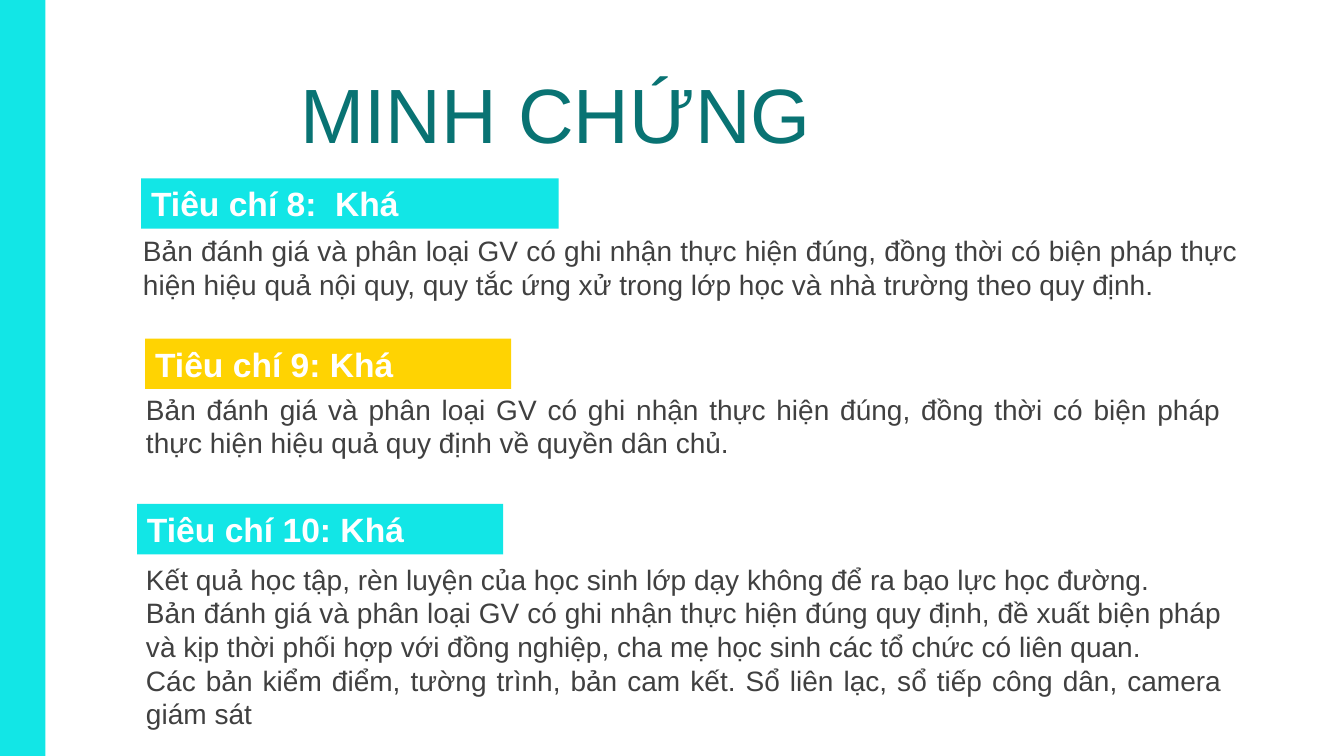
from pptx import Presentation
from pptx.dml.color import RGBColor
from pptx.enum.shapes import MSO_SHAPE
from pptx.enum.text import MSO_ANCHOR, PP_ALIGN
from pptx.util import Inches, Pt

CYAN = RGBColor(0x12, 0xE6, 0xE6)
YELLOW = RGBColor(0xFF, 0xD3, 0x02)
TEAL = RGBColor(0x09, 0x73, 0x73)
GRAY = RGBColor(0x40, 0x40, 0x40)
WHITE = RGBColor(0xFF, 0xFF, 0xFF)

# Each criterion: label, label box, label fill, evidence paragraphs, evidence box
CRITERIA = [
    ("Tiêu chí 8:  Khá", (1.4, 1.77, 4.14, 0.5), CYAN,
     ["Bản đánh giá và phân loại GV có ghi nhận thực hiện đúng, đồng thời có biện pháp "
      "thực hiện hiệu quả nội quy, quy tắc ứng xử trong lớp học và nhà trường theo quy định."],
     (1.32, 2.27, 11.06, 0.77)),
    ("Tiêu chí 9: Khá", (1.44, 3.36, 3.63, 0.5), YELLOW,
     ["Bản đánh giá và phân loại GV có ghi nhận thực hiện đúng, đồng thời có biện pháp "
      "thực hiện hiệu quả quy định về quyền dân chủ."],
     (1.35, 3.84, 10.86, 0.77)),
    ("Tiêu chí 10: Khá", (1.36, 5, 3.63, 0.5), CYAN,
     ["Kết quả học tập, rèn luyện của học sinh lớp dạy không để ra bạo lực học đường.",
      "Bản đánh giá và phân loại GV có ghi nhận thực hiện đúng quy định, đề xuất biện pháp "
      "và kịp thời phối hợp với đồng nghiệp, cha mẹ học sinh các tổ chức có liên quan.",
      "Các bản kiểm điểm, tường trình, bản cam kết. Sổ liên lạc, sổ tiếp công dân, camera "
      "giám sát"],
     (1.35, 5.53, 10.87, 2.46)),
]


def add_bar(slide, box, fill):
    sp = slide.shapes.add_shape(MSO_SHAPE.RECTANGLE, *map(Inches, box))
    sp.shadow.inherit = False
    sp.fill.solid()
    sp.fill.fore_color.rgb = fill
    sp.line.fill.background()
    return sp


def write(sp, lines, size, color, bold=False, align=PP_ALIGN.LEFT, anchor=MSO_ANCHOR.TOP):
    """Fill a shape with one paragraph per line, all in the same style."""
    tf = sp.text_frame
    tf.word_wrap = True
    tf.vertical_anchor = anchor
    tf.text = "\n".join(lines)
    for p in tf.paragraphs:
        p.alignment = align
        p.font.name = "Arial"
        p.font.size = Pt(size)
        p.font.bold = bold
        p.font.color.rgb = color


def add_title(slide, text):
    sp = slide.shapes.add_textbox(Inches(2.88), Inches(0.78), Inches(10.92), Inches(0.79))
    write(sp, [text], 55, TEAL, anchor=MSO_ANCHOR.MIDDLE)
    sp.text_frame.paragraphs[0].line_spacing = 0.9


def add_criterion(slide, label, label_box, fill, evidence, evidence_box):
    sp = slide.shapes.add_textbox(*map(Inches, evidence_box))
    write(sp, evidence, 20, GRAY, align=PP_ALIGN.JUSTIFY)
    write(add_bar(slide, label_box, fill), [label], 24, WHITE, bold=True)


def main():
    prs = Presentation()
    prs.slide_width, prs.slide_height = Inches(13.33), Inches(7.5)
    slide = prs.slides.add_slide(prs.slide_layouts[6])
    add_bar(slide, (0, 0, 0.45, 7.5), CYAN)
    add_title(slide, "MINH CHỨNG")
    for criterion in CRITERIA:
        add_criterion(slide, *criterion)
    prs.save("out.pptx")


if __name__ == "__main__":
    main()
